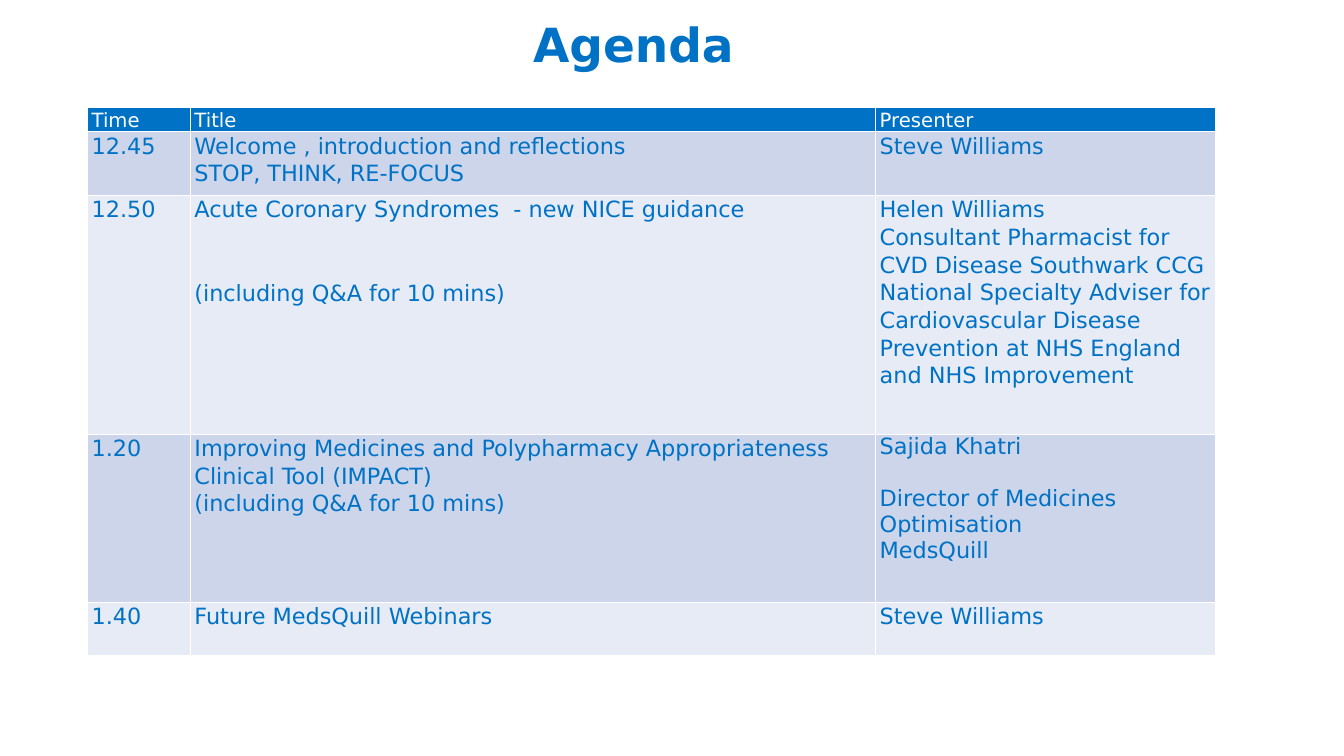
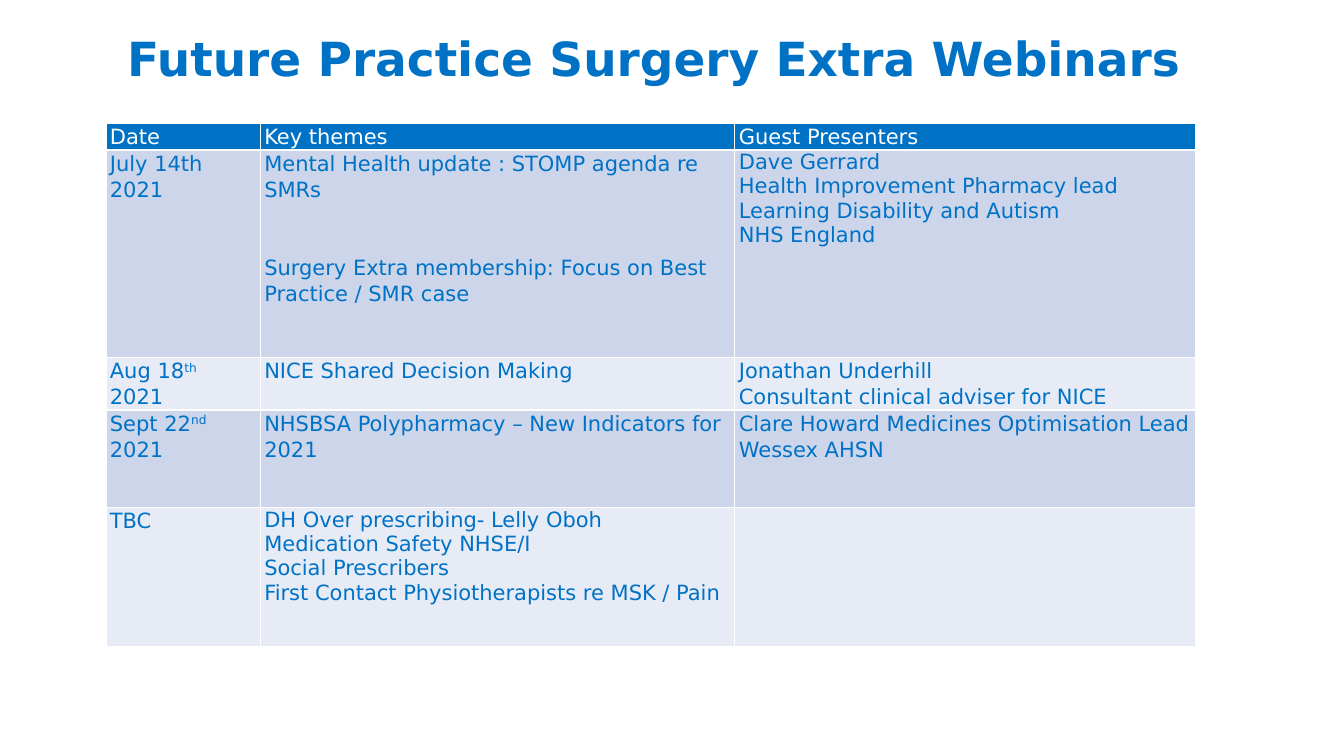
"""Build the agenda slide and the future webinars slide."""
from pptx import Presentation
from pptx.dml.color import RGBColor
from pptx.enum.text import MSO_ANCHOR, MSO_AUTO_SIZE, PP_ALIGN
from pptx.util import Cm, Pt

FONT = "DejaVu Sans"
COLOURS = {"blue": "0072C6", "white": "FFFFFF", "dark_band": "CCD5EA", "light_band": "E7EBF5"}
LINE_SPACING = 1.07
LINE_HEIGHT = 1.16

SLIDES = [
    {
        "title": "Agenda",
        "title_box": (8.46, 0.91, 15.01, 1.04),
        "table_corner": (2.21, 2.7),
        "columns": (2.59, 17.27, 8.56),
        "heights": (0.61, 1.6, 6.02, 4.24, 1.35),
        "header_size": 14,
        "body_size": 16,
        "single_spaced": {(3, 2)},
        "rows": [
            ("Time", "Title", "Presenter"),
            ("12.45", "Welcome , introduction and reflections\nSTOP, THINK, RE-FOCUS", "Steve Williams"),
            (
                "12.50",
                "Acute Coronary Syndromes  - new NICE guidance\n\n\n(including Q&A for 10 mins)",
                "Helen Williams\nConsultant Pharmacist for CVD Disease Southwark CCG\n"
                "National Specialty Adviser for Cardiovascular Disease Prevention "
                "at NHS England and NHS Improvement",
            ),
            (
                "1.20",
                "Improving Medicines and Polypharmacy Appropriateness Clinical Tool (IMPACT)\n"
                "(including Q&A for 10 mins)",
                "Sajida Khatri\n\nDirector of Medicines Optimisation\nMedsQuill",
            ),
            ("1.40", "Future MedsQuill Webinars", "Steve Williams"),
        ],
    },
    {
        "title": "Future Practice Surgery Extra Webinars",
        "title_box": (2.36, 0.38, 28.24, 1.93),
        "table_corner": (2.67, 3.12),
        "columns": (3.89, 11.96, 11.6),
        "heights": (0.66, 5.23, 1.32, 2.46, 3.51),
        "header_size": 15,
        "body_size": 15,
        "single_spaced": {(1, 2), (4, 1)},
        "rows": [
            ("Date", "Key themes", "Guest Presenters"),
            (
                "July 14th 2021",
                "Mental Health update : STOMP agenda re SMRs\n\n\n"
                "Surgery Extra membership: Focus on Best Practice / SMR case",
                "Dave Gerrard\nHealth Improvement Pharmacy lead\n"
                "Learning Disability and Autism\nNHS England",
            ),
            (
                "Aug 18^th^ 2021",
                "NICE Shared Decision Making",
                "Jonathan Underhill\nConsultant clinical adviser for NICE",
            ),
            (
                "Sept 22^nd^ 2021",
                "NHSBSA Polypharmacy – New Indicators for 2021",
                "Clare Howard Medicines Optimisation Lead\nWessex AHSN",
            ),
            (
                "TBC",
                "DH Over prescribing- Lelly Oboh\nMedication Safety NHSE/I\n"
                "Social Prescribers\nFirst Contact Physiotherapists re MSK / Pain",
                "",
            ),
        ],
    },
]


def add_span(para, text, size, colour, bold=False):
    span = para.add_run()
    span.text = text
    span.font.name = FONT
    span.font.size = Pt(size)
    span.font.bold = bold
    span.font.color.rgb = RGBColor.from_string(COLOURS[colour])
    return span


def fill_cell(cell, text, size, colour, spacing):
    """Write one paragraph per line; empty lines become space before the next."""
    frame = cell.text_frame
    para = frame.paragraphs[0]
    skipped = 0
    for index, line in enumerate(text.split("\n")):
        if not line:
            skipped += 1
            continue
        if index:
            para = frame.add_paragraph()
        para.line_spacing = spacing
        if skipped:
            para.space_before = Pt(round(skipped * size * LINE_HEIGHT * spacing, 1))
            skipped = 0
        for position, part in enumerate(line.split("^")):
            span = add_span(para, part, size, colour)
            if position % 2:
                span._r.get_or_add_rPr().set("baseline", "30000")


deck = Presentation()
deck.slide_width = Cm(33.87)
deck.slide_height = Cm(19.05)

for content in SLIDES:
    page = deck.slides.add_slide(deck.slide_layouts[5])

    title = page.shapes.title
    title.left, title.top, title.width, title.height = map(Cm, content["title_box"])
    frame = title.text_frame
    frame.word_wrap = True
    frame.auto_size = MSO_AUTO_SIZE.NONE
    frame.vertical_anchor = MSO_ANCHOR.BOTTOM
    para = frame.paragraphs[0]
    para.alignment = PP_ALIGN.CENTER
    para.line_spacing = 0.9
    add_span(para, content["title"], 33.6, "blue", bold=True)

    rows, columns, heights = content["rows"], content["columns"], content["heights"]
    left, top = content["table_corner"]
    table = page.shapes.add_table(
        len(rows), len(columns), Cm(left), Cm(top), Cm(sum(columns)), Cm(sum(heights))
    ).table
    for column, width in zip(table.columns, columns):
        column.width = Cm(width)
    for row, height in zip(table.rows, heights):
        row.height = Cm(height)

    for row_number, texts in enumerate(rows):
        if row_number == 0:
            band, colour, size = "blue", "white", content["header_size"]
        else:
            band = "dark_band" if row_number % 2 else "light_band"
            colour, size = "blue", content["body_size"]
        for column_number, text in enumerate(texts):
            cell = table.cell(row_number, column_number)
            cell.margin_left = cell.margin_right = Cm(0.1)
            cell.margin_top = cell.margin_bottom = 0
            cell.fill.solid()
            cell.fill.fore_color.rgb = RGBColor.from_string(COLOURS[band])
            single = (row_number, column_number) in content["single_spaced"]
            fill_cell(cell, text, size, colour, 1.0 if single else LINE_SPACING)

deck.save("out.pptx")
